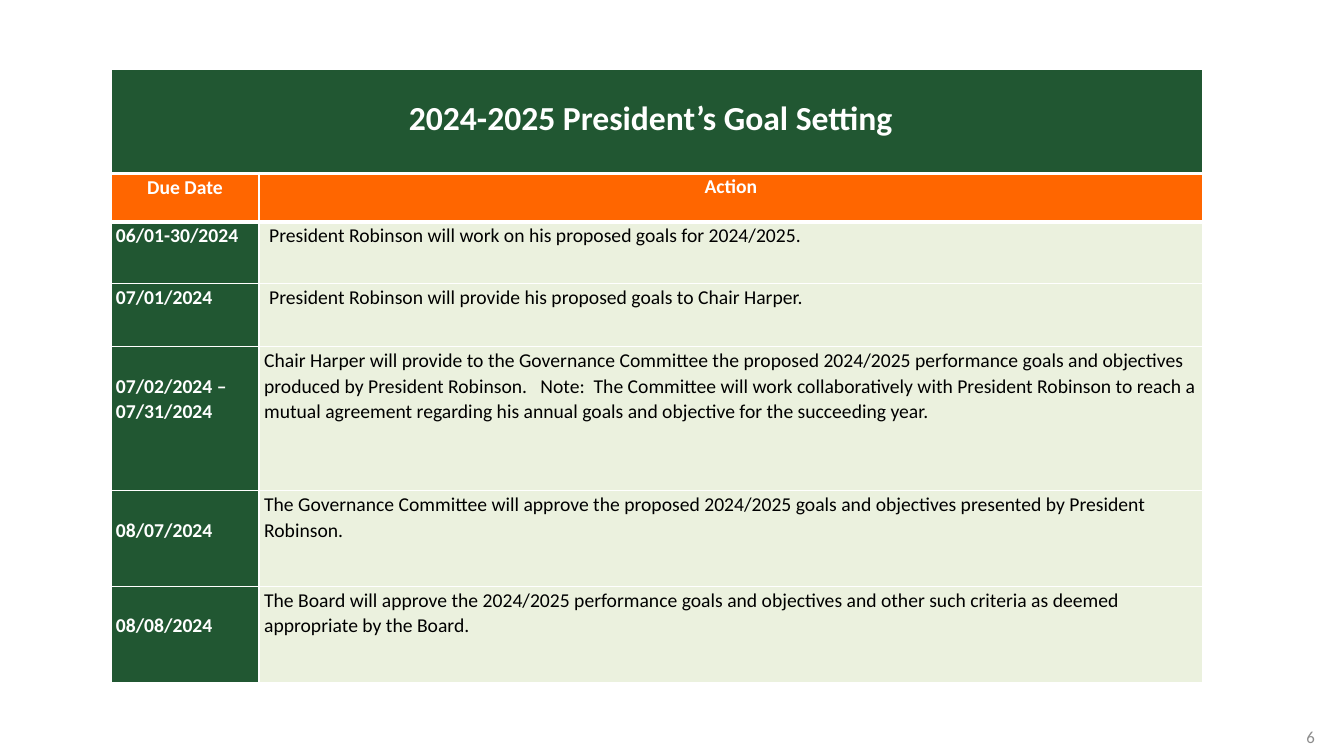
from lxml import etree
from pptx import Presentation
from pptx.dml.color import RGBColor
from pptx.enum.text import MSO_ANCHOR, PP_ALIGN
from pptx.oxml.ns import qn
from pptx.util import Pt

PX = 9144  # 100 px to the inch
LEFT, CENTER, RIGHT = PP_ALIGN.LEFT, PP_ALIGN.CENTER, PP_ALIGN.RIGHT
TOP, MIDDLE = MSO_ANCHOR.TOP, MSO_ANCHOR.MIDDLE
COLORS = {"green": "215732", "orange": "FF6600", "cream": "EBF1DE",
          "white": "FFFFFF", "black": "000000", "gray": "8C8C8C"}

COLUMN_WIDTHS = [147, 936]
ROW_HEIGHTS = [103, 48, 61, 63, 143, 95, 95]
ONE_LINE = 25  # height of a 14 pt line
TITLE = "2024-2025 President’s Goal Setting"
# due date, lines the date is lowered by, action, extra indent of the action
STEPS = [
    ("06/01-30/2024", 0,
     "President Robinson will work on his proposed goals for 2024/2025.", 5),
    ("07/01/2024", 0,
     "President Robinson will provide his proposed goals to Chair Harper.", 5),
    ("07/02/2024 – 07/31/2024", 1,
     "Chair Harper will provide to the Governance Committee the proposed "
     "2024/2025 performance goals and objectives produced by President "
     "Robinson.   Note:  The Committee will work collaboratively with "
     "President Robinson to reach a mutual agreement regarding his annual "
     "goals and objective for the succeeding year.", 0),
    ("08/07/2024", 1,
     "The Governance Committee will approve the proposed 2024/2025 goals and "
     "objectives presented by President Robinson.", 0),
    ("08/08/2024", 1,
     "The Board will approve the 2024/2025 performance goals and objectives "
     "and other such criteria as deemed appropriate by the Board.", 0),
]


def color(name):
    return RGBColor.from_string(COLORS[name])


def write(frame, text, size=14, ink="black", bold=False, align=LEFT,
          spacing=1.0, font="Calibri"):
    para = frame.paragraphs[0]
    para.alignment = align
    para.line_spacing = spacing
    span = para.add_run()
    span.text = text
    span.font.name = font
    span.font.size = Pt(size)
    span.font.bold = bold
    span.font.color.rgb = color(ink)


class SlideBuilder:
    def __init__(self, page):
        self.page = page
        self.spacing = 1.06
        self.margins = (5, 1, 5, 0)

    def text_box(self, left, top, width, height, text, **style):
        box = self.page.shapes.add_textbox(
            left * PX, top * PX, width * PX, height * PX)
        frame = box.text_frame
        frame.word_wrap = True
        frame.vertical_anchor = MIDDLE
        write(frame, text, **style)

    def table(self, left, top, widths, heights):
        frame = self.page.shapes.add_table(
            len(heights), len(widths), left * PX, top * PX,
            sum(widths) * PX, sum(heights) * PX)
        grid = frame.table
        grid.first_row = grid.horz_banding = False
        for column, width in zip(grid.columns, widths):
            column.width = width * PX
        for row, height in zip(grid.rows, heights):
            row.height = height * PX
        return grid

    def borders(self, cell, above, below):
        """Draw white borders: 1 pt at the sides, given points above and below."""
        properties = cell._tc.get_or_add_tcPr()
        for side, points in (("L", 1), ("R", 1), ("T", above), ("B", below)):
            line = etree.SubElement(
                properties, qn("a:ln" + side), w=str(Pt(points)))
            fill = etree.SubElement(line, qn("a:solidFill"))
            etree.SubElement(fill, qn("a:srgbClr"), val=COLORS["white"])

    def cell(self, cell, text, fill, margins=None, above=1, below=1, **style):
        self.borders(cell, above, below)
        cell.fill.solid()
        cell.fill.fore_color.rgb = color(fill)
        cell.vertical_anchor = TOP
        (cell.margin_left, cell.margin_top, cell.margin_right,
         cell.margin_bottom) = [side * PX for side in margins or self.margins]
        write(cell.text_frame, text, spacing=self.spacing, **style)


def main():
    deck = Presentation()
    deck.slide_width, deck.slide_height = 1333 * PX, 750 * PX
    builder = SlideBuilder(deck.slides.add_slide(deck.slide_layouts[6]))
    builder.text_box(1269, 714, 45, 33, "6", size=12, ink="gray", align=RIGHT)

    grid = builder.table(110, 69, COLUMN_WIDTHS, ROW_HEIGHTS)
    grid.cell(0, 0).merge(grid.cell(0, 1))
    heading = {"ink": "white", "bold": True}
    builder.cell(grid.cell(0, 0), TITLE, "green", (5, 1 + ONE_LINE, 17, 0),
                 below=3, size=24, align=CENTER, **heading)
    for column, (label, margins) in enumerate(
            [("Due Date", None), ("Action", (0, 0, 0, 0))]):
        builder.cell(grid.cell(1, column), label, "orange", margins,
                     above=3, below=3, align=CENTER, **heading)
    for row, (date, lowered, action, indent) in enumerate(STEPS, start=2):
        above = 3 if row == 2 else 1
        builder.cell(grid.cell(row, 0), date, "green",
                     (5, 1 + lowered * ONE_LINE, 5, 0), above=above, **heading)
        builder.cell(grid.cell(row, 1), action, "cream",
                     (5 + indent, 1, 5, 0), above=above)

    deck.save("out.pptx")


if __name__ == "__main__":
    main()
